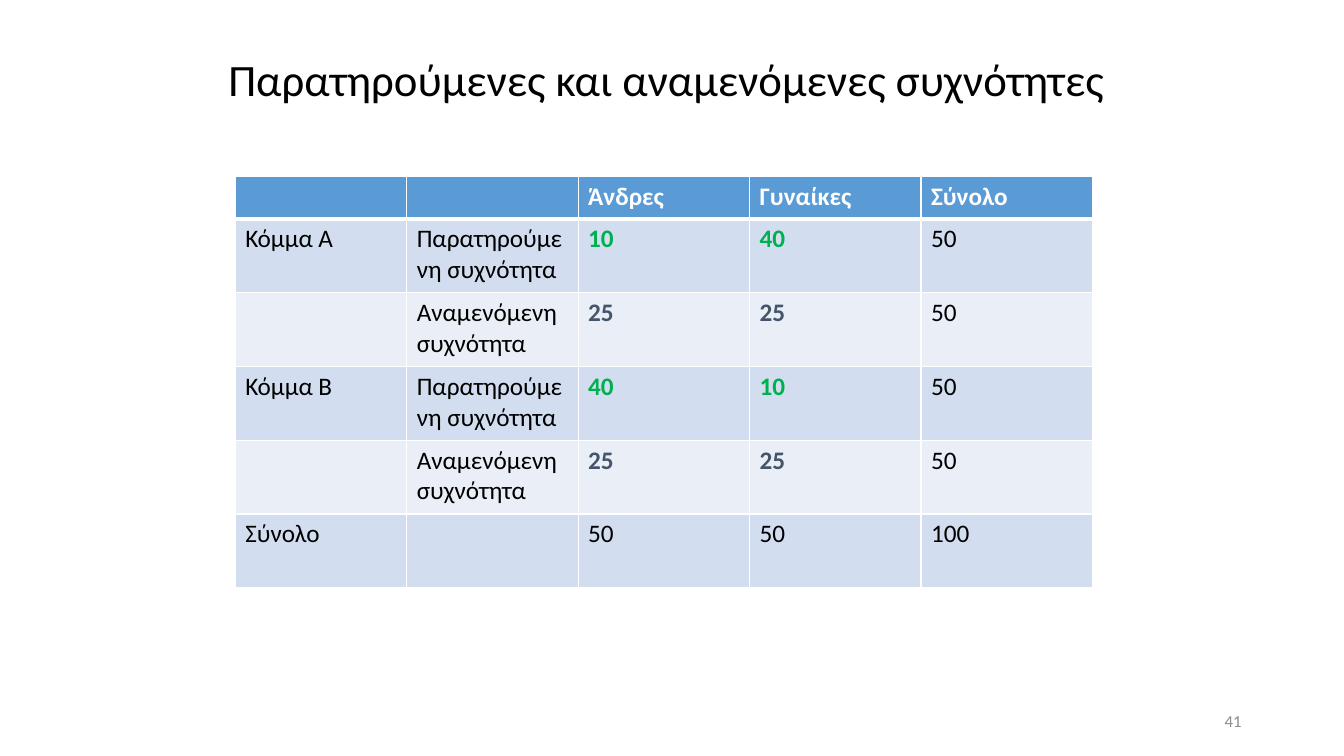
import dataclasses

import lxml.etree
import pptx
import pptx.dml.color
import pptx.enum.text
import pptx.oxml.ns
import pptx.util

Cm = pptx.util.Cm
Pt = pptx.util.Pt
RGBColor = pptx.dml.color.RGBColor
Align = pptx.enum.text.PP_ALIGN

BLACK = RGBColor(0x00, 0x00, 0x00)
WHITE = RGBColor(0xFF, 0xFF, 0xFF)
GREY = RGBColor(0x8C, 0x8C, 0x8C)
GREEN = RGBColor(0x00, 0xB0, 0x50)
SLATE = RGBColor(0x44, 0x54, 0x6A)
HEADER_BLUE = RGBColor(0x5B, 0x9B, 0xD5)
BAND_DARK = RGBColor(0xD2, 0xDE, 0xEF)
BAND_LIGHT = RGBColor(0xEA, 0xEF, 0xF7)

COLUMN_WIDTH = Cm(4.32)
HEADER_HEIGHT = Cm(1.06)
ROW_HEIGHT = Cm(1.86)
THIN, THICK = Pt(1), Pt(3)


@dataclasses.dataclass(frozen=True)
class FrequencyRow:
    texts: tuple[str, ...]
    fill: RGBColor
    count_color: RGBColor = BLACK
    count_bold: bool = False


OBSERVED = "Παρατηρούμενη συχνότητα"
EXPECTED = "Αναμενόμενη συχνότητα"
ROWS = (
    FrequencyRow(("", "", "Άνδρες", "Γυναίκες", "Σύνολο"), HEADER_BLUE, WHITE, True),
    FrequencyRow(("Κόμμα Α", OBSERVED, "10", "40", "50"), BAND_DARK, GREEN, True),
    FrequencyRow(("", EXPECTED, "25", "25", "50"), BAND_LIGHT, SLATE, True),
    FrequencyRow(("Κόμμα Β", OBSERVED, "40", "10", "50"), BAND_DARK, GREEN, True),
    FrequencyRow(("", EXPECTED, "25", "25", "50"), BAND_LIGHT, SLATE, True),
    FrequencyRow(("Σύνολο", "", "50", "50", "100"), BAND_DARK),
)


def format_font(font, size: int, color: RGBColor, bold: bool = False) -> None:
    for name, value in {"name": "Calibri", "size": Pt(size), "bold": bold}.items():
        setattr(font, name, value)
    font.color.rgb = color


def fill_text(shape, text: str, size: int, color: RGBColor, alignment: Align) -> None:
    frame = shape.text_frame
    frame.text = text
    settings = {
        "word_wrap": True,
        "auto_size": pptx.enum.text.MSO_AUTO_SIZE.NONE,
        "vertical_anchor": pptx.enum.text.MSO_ANCHOR.MIDDLE,
    }
    for name, value in settings.items():
        setattr(frame, name, value)
    paragraph = frame.paragraphs[0]
    paragraph.alignment = alignment
    format_font(paragraph.runs[0].font, size, color)


def add_borders(cell, top: int, bottom: int) -> None:
    qn = pptx.oxml.ns.qn
    properties = cell._tc.get_or_add_tcPr()
    for side, width in {"L": THIN, "R": THIN, "T": top, "B": bottom}.items():
        line = lxml.etree.SubElement(properties, qn(f"a:ln{side}"), w=str(width))
        solid = lxml.etree.SubElement(line, qn("a:solidFill"))
        lxml.etree.SubElement(solid, qn("a:srgbClr"), val=str(WHITE))


def add_frequency_table(slide) -> None:
    column_count = len(ROWS[0].texts)
    height = HEADER_HEIGHT + ROW_HEIGHT * (len(ROWS) - 1)
    table = slide.shapes.add_table(
        len(ROWS), column_count, Cm(5.93), Cm(4.45), COLUMN_WIDTH * column_count, height
    ).table
    for column in table.columns:
        column.width = COLUMN_WIDTH
    for row_index, row in enumerate(ROWS):
        is_header = row_index == 0
        table.rows[row_index].height = HEADER_HEIGHT if is_header else ROW_HEIGHT
        for column_index, text in enumerate(row.texts):
            cell = table.cell(row_index, column_index)
            add_borders(cell, THICK if row_index == 1 else THIN, THICK if is_header else THIN)
            cell.fill.solid()
            cell.fill.fore_color.rgb = row.fill
            cell.text = text
            is_count = is_header or column_index in (2, 3)
            color = row.count_color if is_count else BLACK
            paragraph = cell.text_frame.paragraphs[0]
            font = paragraph.runs[0].font if text else paragraph.font
            format_font(font, 18, color, is_count and row.count_bold)


def main() -> None:
    presentation = pptx.Presentation()
    presentation.slide_width = Cm(33.87)
    presentation.slide_height = Cm(19.05)
    slide = presentation.slides.add_slide(presentation.slide_layouts[5])

    title = slide.shapes.title
    placement = {"left": Cm(5.5), "top": Cm(0.76), "width": Cm(22.86), "height": Cm(2.62)}
    for name, value in placement.items():
        setattr(title, name, value)
    fill_text(title, "Παρατηρούμενες και αναμενόμενες συχνότητες", 32, BLACK, Align.LEFT)
    title.text_frame.paragraphs[0].line_spacing = 0.9

    page_number = slide.shapes.add_textbox(Cm(23.92), Cm(17.66), Cm(7.62), Cm(1.01))
    fill_text(page_number, "41", 12, GREY, Align.RIGHT)

    add_frequency_table(slide)
    presentation.save("out.pptx")


if __name__ == "__main__":
    main()
